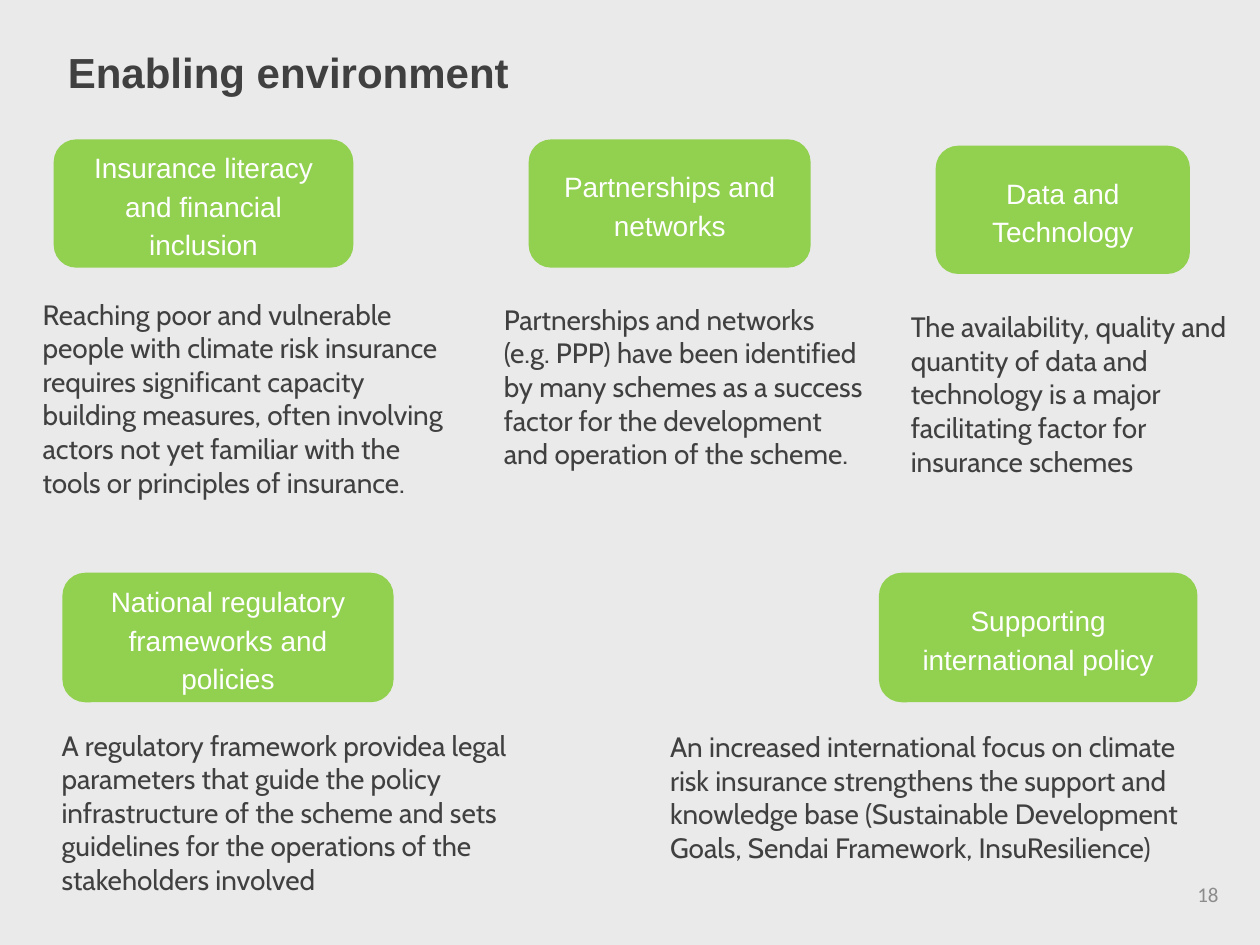
import pptx
import pptx.util
import pptx.dml.color
import pptx.enum.shapes
import pptx.enum.text
from pptx.util import Inches

ALIGN = pptx.enum.text.PP_ALIGN
ANCHOR = pptx.enum.text.MSO_ANCHOR
GREEN, DARK, GREY, WHITE = "92D050", "404040", "8C8C8C", "FFFFFF"


def color(value):
    return pptx.dml.color.RGBColor.from_string(value)


def write(box, text, size, font, ink, align=ALIGN.LEFT, anchor=ANCHOR.TOP, bold=False, spaced=False):
    frame = box.text_frame
    frame.word_wrap = True
    frame.vertical_anchor = anchor
    para = frame.paragraphs[0]
    para.alignment = align
    if spaced:
        para.line_spacing = 1.15
        para.space_after = pptx.util.Pt(10)
    span = para.add_run()
    span.text = text
    span.font.size = pptx.util.Pt(size)
    span.font.name = font
    span.font.bold = bold
    span.font.color.rgb = color(ink)


deck = pptx.Presentation()
deck.slide_width, deck.slide_height = Inches(10), Inches(7.5)
page = deck.slides.add_slide(deck.slide_layouts[6])
page.background.fill.solid()
page.background.fill.fore_color.rgb = color("EAEAEA")

# Title
title = page.shapes.add_textbox(Inches(0.44), Inches(0.26), Inches(4.48), Inches(0.74))
write(title, "Enabling environment", 24, "Arial", DARK, bold=True, spaced=True)

# Topics: label, label place, explanation, explanation place
topics = [
    ("Insurance literacy and financial inclusion", (0.44, 1.12, 2.35, 0.99),
     "Reaching poor and vulnerable people with climate risk insurance requires significant "
     "capacity building measures, often involving actors not yet familiar with the tools or "
     "principles of insurance.", (0.24, 2.31, 3.5, 1.99)),
    ("Partnerships and networks", (4.21, 1.12, 2.21, 0.99),
     "Partnerships and networks (e.g. PPP) have been identified by many schemes as a success "
     "factor for the development and operation of the scheme.", (3.9, 2.35, 3.07, 1.72)),
    ("Data and Technology", (7.44, 1.17, 1.99, 0.99),
     "The availability, quality and quantity of data and technology is a major facilitating "
     "factor for insurance schemes", (7.13, 2.41, 2.85, 1.45)),
    ("National regulatory frameworks and policies", (0.51, 4.56, 2.6, 1),
     "A regulatory framework providea legal parameters that guide the policy infrastructure of "
     "the scheme and sets guidelines for the operations of the stakeholders involved",
     (0.39, 5.73, 4.13, 1.45)),
    ("Supporting international policy", (6.99, 4.56, 2.5, 1),
     "An increased international focus on climate risk insurance strengthens the support and "
     "knowledge base (Sustainable Development Goals, Sendai Framework, InsuResilience)",
     (5.22, 5.74, 4.43, 1.45)),
]
for label, label_place, explanation, text_place in topics:
    button = page.shapes.add_shape(
        pptx.enum.shapes.MSO_SHAPE.ROUNDED_RECTANGLE, *map(Inches, label_place))
    button.shadow.inherit = False
    button.fill.solid()
    button.fill.fore_color.rgb = color(GREEN)
    button.line.color.rgb = color(GREEN)
    button.line.width = pptx.util.Pt(2)
    write(button, label, 16, "Arial", WHITE, ALIGN.CENTER, ANCHOR.MIDDLE, spaced=True)

    body = page.shapes.add_textbox(*map(Inches, text_place))
    write(body, explanation, 16, "Cabin", DARK)
    body.text_frame.auto_size = pptx.enum.text.MSO_AUTO_SIZE.SHAPE_TO_FIT_TEXT

# Page number
number = page.shapes.add_textbox(Inches(7.44), Inches(6.9), Inches(2.33), Inches(0.4))
write(number, "18", 12, "Calibri", GREY, ALIGN.RIGHT, ANCHOR.MIDDLE)

deck.save("out.pptx")
